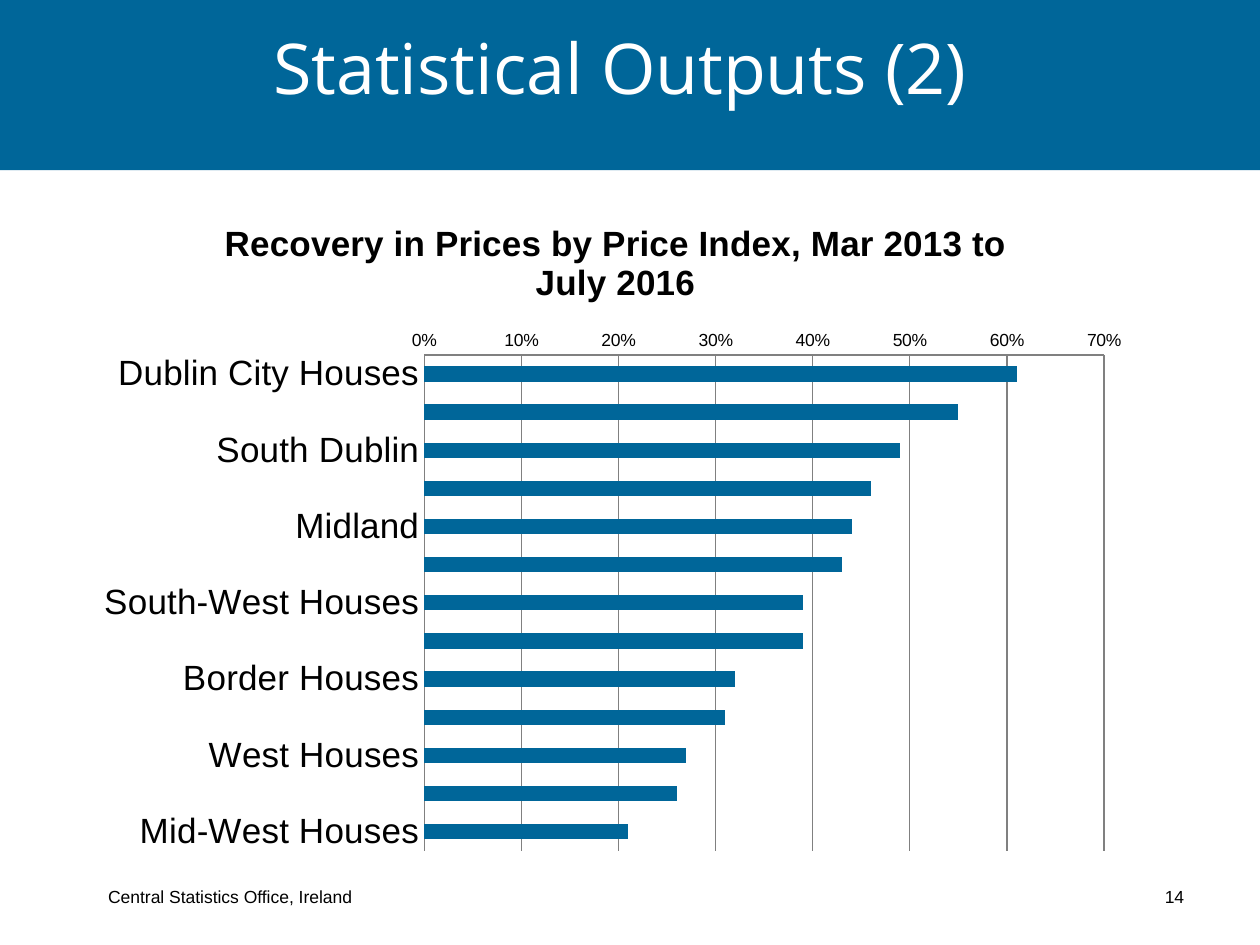
import dataclasses

import lxml.etree
import pptx
import pptx.chart.data
import pptx.dml.color
import pptx.enum.chart
import pptx.enum.shapes
import pptx.enum.text
import pptx.oxml
import pptx.oxml.ns
import pptx.util

Inches = pptx.util.Inches
Pt = pptx.util.Pt
RGB = pptx.dml.color.RGBColor
qn = pptx.oxml.ns.qn


@dataclasses.dataclass(frozen=True)
class Theme:
    blue: RGB = RGB(0x00, 0x66, 0x99)
    white: RGB = RGB(0xFF, 0xFF, 0xFF)
    black: RGB = RGB(0x00, 0x00, 0x00)
    grid: RGB = RGB(0x80, 0x80, 0x80)
    title_font: str = "Open Sans"
    body_font: str = "Arial"
    title_size: int = 40
    chart_size: int = 20
    small_size: int = 10


@dataclasses.dataclass(frozen=True)
class Box:
    left: float
    top: float
    width: float
    height: float

    def emu(self) -> tuple:
        return tuple(Inches(v) for v in dataclasses.astuple(self))


@dataclasses.dataclass(frozen=True)
class Recovery:
    index: str
    share: float


THEME = Theme()
BAND = Box(0, -0.29, 10, 1.64)
TITLE = Box(1.19, -0.1, 7.46, 1.25)
FOOTER = Box(0.76, 6.94, 8.85, 0.31)
CHART = Box(0.67, 1.54, 8.43, 5.32)
PAGE_NUMBER_TAB = 8.54

RECOVERIES = [
    Recovery("Dublin City Houses", 0.61),
    Recovery("Dublin All Apartments", 0.55),
    Recovery("South Dublin", 0.49),
    Recovery("Fingal Houses", 0.46),
    Recovery("Midland", 0.44),
    Recovery("Mid-East Houses", 0.43),
    Recovery("South-West Houses", 0.39),
    Recovery("Dun Laoghaire-Rathdown", 0.39),
    Recovery("Border Houses", 0.32),
    Recovery("South-East Houses", 0.31),
    Recovery("West Houses", 0.27),
    Recovery("Rest of Ireland Apartments", 0.26),
    Recovery("Mid-West Houses", 0.21),
]


def style_font(font, name: str, size: int, color: RGB, bold: bool = False) -> None:
    font.name = name
    font.size = Pt(size)
    font.bold = bold
    font.color.rgb = color


def add_blue_rect(slide, box: Box):
    sp = slide.shapes.add_shape(pptx.enum.shapes.MSO_SHAPE.RECTANGLE, *box.emu())
    sp.shadow.inherit = False
    sp.fill.solid()
    sp.fill.fore_color.rgb = THEME.blue
    sp.line.fill.background()
    return sp


def add_title(slide, text: str) -> None:
    tf = add_blue_rect(slide, TITLE).text_frame
    tf.word_wrap = True
    tf.vertical_anchor = pptx.enum.text.MSO_ANCHOR.MIDDLE
    tf.text = text
    p = tf.paragraphs[0]
    p.alignment = pptx.enum.text.PP_ALIGN.CENTER
    style_font(p.runs[0].font, THEME.title_font, THEME.title_size, THEME.white)


def add_footer(slide, office: str, page: int) -> None:
    tf = slide.shapes.add_textbox(*FOOTER.emu()).text_frame
    tf.word_wrap = True
    tf.vertical_anchor = pptx.enum.text.MSO_ANCHOR.BOTTOM
    tf.text = f"{office}\t{page}"
    p = tf.paragraphs[0]
    p.line_spacing = 0.8
    tabs = lxml.etree.SubElement(p._p.get_or_add_pPr(), qn("a:tabLst"))
    lxml.etree.SubElement(
        tabs, qn("a:tab"), pos=str(Inches(PAGE_NUMBER_TAB)), algn="r"
    )
    for r in p.runs:
        style_font(r.font, THEME.body_font, THEME.small_size, THEME.black)


def place_plot(chart, x: float, y: float, w: float, h: float) -> None:
    area = chart._chartSpace.chart.plotArea
    layout = area.find(qn("c:layout"))
    if layout is None:
        layout = lxml.etree.Element(qn("c:layout"))
        area.insert(0, layout)
    manual = lxml.etree.SubElement(layout, qn("c:manualLayout"))
    settings = dict(
        layoutTarget="inner", xMode="edge", yMode="edge", x=x, y=y, w=w, h=h
    )
    for tag, value in settings.items():
        lxml.etree.SubElement(manual, qn(f"c:{tag}"), val=str(value))


def style_axis(axis, size: int) -> None:
    axis.major_tick_mark = pptx.enum.chart.XL_TICK_MARK.NONE
    axis.minor_tick_mark = pptx.enum.chart.XL_TICK_MARK.NONE
    axis.format.line.color.rgb = THEME.grid
    axis.format.line.width = Pt(0.75)
    style_font(axis.tick_labels.font, THEME.body_font, size, THEME.black)


def add_recovery_chart(slide, title: str, recoveries: list[Recovery]) -> None:
    data = pptx.chart.data.CategoryChartData(number_format="0%")
    data.categories = [item.index for item in recoveries]
    data.add_series("Series 1", [item.share for item in recoveries])
    chart = slide.shapes.add_chart(
        pptx.enum.chart.XL_CHART_TYPE.BAR_CLUSTERED, *CHART.emu(), data
    ).chart
    style_font(chart.font, THEME.body_font, THEME.small_size, THEME.black)
    chart.has_legend = False
    chart.has_title = True
    tf = chart.chart_title.text_frame
    tf.text = title
    style_font(
        tf.paragraphs[0].runs[0].font,
        THEME.body_font, THEME.chart_size, THEME.black, bold=True,
    )
    place_plot(chart, 0.32, 0.24, 0.64, 0.74)

    plot = chart.plots[0]
    plot.gap_width = 150
    plot.vary_by_categories = False
    fill = plot.series[0].format.fill
    fill.solid()
    fill.fore_color.rgb = THEME.blue

    style_axis(chart.category_axis, THEME.chart_size)
    chart.category_axis.reverse_order = True
    axis = chart.value_axis
    style_axis(axis, THEME.small_size)
    axis.minimum_scale, axis.maximum_scale, axis.major_unit = 0, 0.7, 0.1
    axis.tick_labels.number_format = "0%"
    axis.tick_labels.number_format_is_linked = False
    axis.has_major_gridlines = True
    axis.major_gridlines.format.line.color.rgb = THEME.grid
    axis.major_gridlines.format.line.width = Pt(0.75)


def main() -> None:
    prs = pptx.Presentation()
    prs.slide_width, prs.slide_height = Inches(10), Inches(7.5)
    s = prs.slides.add_slide(prs.slide_layouts[6])
    add_blue_rect(s, BAND)
    add_title(s, "Statistical Outputs (2)")
    add_footer(s, "Central Statistics Office, Ireland", 14)
    add_recovery_chart(
        s, "Recovery in Prices by Price Index, Mar 2013 to July 2016", RECOVERIES
    )
    prs.save("out.pptx")


if __name__ == "__main__":
    main()
